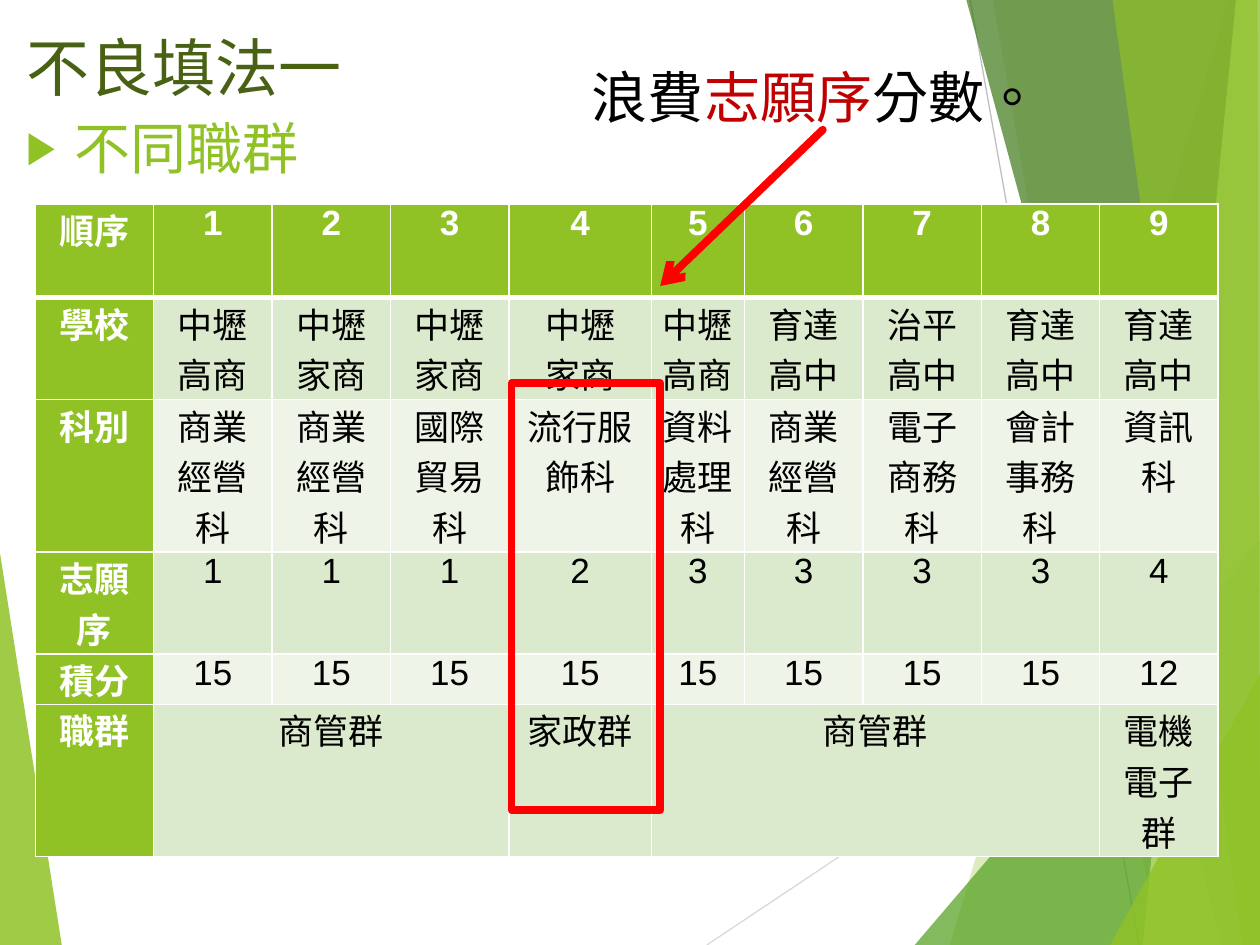
from lxml.etree import SubElement
from pptx import Presentation
from pptx.dml.color import RGBColor
from pptx.enum.shapes import MSO_CONNECTOR as Connector, MSO_SHAPE as Shape
from pptx.enum.text import MSO_ANCHOR as Anchor, PP_ALIGN as Align
from pptx.oxml import parse_xml
from pptx.oxml.ns import nsdecls, qn
from pptx.util import Inches, Pt

COLORS = {
    "lime": "90C226", "green": "54A021", "forest": "3F7819", "pale": "C0E474",
    "title": "486113", "band": "DBE9CD", "light": "EEF4E8", "white": "FFFFFF",
    "black": "000000", "red": "FF0000", "crimson": "C00000",
    "silver": "D9D9D9", "gray": "BFBFBF",
}

LEFT_FACET = ([(0, 4.39), (0.49, 7.5), (0, 7.5)], "lime", 85)
RIGHT_FACETS = [
    ([(9.75, 0), (7.54, 7.5), (10, 7.5), (10, 0)], "lime", 30),
    ([(7.88, 0), (9.19, 7.5), (10, 7.5), (10, 0)], "lime", 20),
    ([(7.26, 7.5), (10, 4.29), (10, 7.5)], "green", 72),
    ([(7.67, 0), (9.7, 7.5), (10, 7.5), (10, 0)], "forest", 70),
    ([(9.81, 0), (9.07, 7.5), (10, 7.5), (10, 0)], "pale", 70),
    ([(8.83, 0), (9.86, 7.5), (10, 7.5), (9.98, 0)], "lime", 65),
    ([(8.81, 7.5), (10, 5.35), (10, 7.5)], "lime", 80),
]
BACK_LINES = [((5.61, 7.5), (10, 4.57), "silver"), ((7.7, 0), (9.04, 7.5), "gray")]

ROWS = [
    ["順序", "1", "2", "3", "4", "5", "6", "7", "8", "9"],
    ["學校", "中壢高商", "中壢家商", "中壢家商", "中壢\n家商", "中壢高商",
     "育達高中", "治平高中", "育達高中", "育達高中"],
    ["科別", "商業經營科", "商業經營科", "國際貿易科", "流行服飾科", "資料處理科",
     "商業經營科", "電子商務科", "會計事務科", "資訊科"],
    ["志願序", "1", "1", "1", "2", "3", "3", "3", "3", "4"],
    ["積分", "15", "15", "15", "15", "15", "15", "15", "15", "12"],
    ["職群", "商管群", "", "", "家政群", "商管群", "", "", "", "電機電子群"],
]
MERGES = [(5, 1, 3), (5, 5, 8)]
COLUMN_WIDTHS = [0.94] * 4 + [1.13, 0.74] + [0.94] * 4
ROW_HEIGHTS = [0.74, 0.81, 1.21, 0.81, 0.4, 1.21]


def color(name):
    return RGBColor.from_string(COLORS[name])


def add_facet(slide, points, fill, opacity):
    corners = [(Inches(x), Inches(y)) for x, y in points]
    builder = slide.shapes.build_freeform(*corners[0])
    builder.add_line_segments(corners[1:], close=True)
    facet = builder.convert_to_shape()
    facet.shadow.inherit = False
    facet.line.fill.background()
    facet.fill.solid()
    facet.fill.fore_color.rgb = color(fill)
    tint = facet.fill._xPr.find(".//" + qn("a:srgbClr"))
    SubElement(tint, qn("a:alpha"), val=str(opacity * 1000))


def add_line(slide, start, end, stroke, width):
    line = slide.shapes.add_connector(
        Connector.STRAIGHT, *(Inches(value) for value in start + end))
    line.line.color.rgb = color(stroke)
    line.line.width = Pt(width)
    SubElement(line._element.spPr, qn("a:effectLst"))
    return line


def add_text(slide, place, spans, size, anchor):
    box = slide.shapes.add_textbox(*(Inches(value) for value in place))
    frame = box.text_frame
    frame.word_wrap = True
    frame.vertical_anchor = anchor
    para = frame.paragraphs[0]
    for text, font, fill in spans:
        span = para.add_run()
        span.text = text
        span.font.size = Pt(size)
        span.font.name = font
        span.font.color.rgb = color(fill)
        span._r.get_or_add_rPr().set("lang", "zh-TW")
    return box


def add_bullet(para):
    props = para._p.get_or_add_pPr()
    props.set("marL", str(Inches(0.38)))
    props.set("indent", str(-Inches(0.38)))
    tint = SubElement(props, qn("a:buClr"))
    SubElement(tint, qn("a:srgbClr"), val=COLORS["lime"])
    SubElement(props, qn("a:buSzPct"), val="80000")
    SubElement(props, qn("a:buFont"), typeface="Arial")
    SubElement(props, qn("a:buChar"), char="▶")


def set_borders(cell, row):
    widths = {"L": 1, "R": 1, "T": 3 if row == 1 else 1, "B": 3 if row == 0 else 1}
    props = cell._tc.get_or_add_tcPr()
    for index, (side, width) in enumerate(widths.items()):
        props.insert(index, parse_xml(
            f'<a:ln{side} {nsdecls("a")} w="{Pt(width)}"><a:solidFill>'
            f'<a:srgbClr val="{COLORS["white"]}"/></a:solidFill></a:ln{side}>'))


def style_cell(cell, text, row, column):
    heading = row == 0 or column == 0
    cell.text = text
    cell.margin_left = cell.margin_right = Inches(0.07)
    cell.margin_top = cell.margin_bottom = 0
    cell.fill.solid()
    cell.fill.fore_color.rgb = color(
        "lime" if heading else "band" if row % 2 else "light")
    set_borders(cell, row)
    for para in cell.text_frame.paragraphs:
        para.alignment = Align.CENTER
        para.font.size = Pt(20)
        for span in para.runs:
            span.font.size = Pt(20)
            span.font.name = "Arial"
            span.font.bold = heading
            span.font.color.rgb = color("white" if heading else "black")


def add_choices(slide):
    table = slide.shapes.add_table(
        len(ROWS), len(COLUMN_WIDTHS), Inches(0.28), Inches(1.62),
        Inches(sum(COLUMN_WIDTHS)), Inches(sum(ROW_HEIGHTS))).table
    for column, width in zip(table.columns, COLUMN_WIDTHS):
        column.width = Inches(width)
    for row, height in zip(table.rows, ROW_HEIGHTS):
        row.height = Inches(height)
    for r, texts in enumerate(ROWS):
        for c, text in enumerate(texts):
            style_cell(table.cell(r, c), text, r, c)
    for row, first, last in MERGES:
        table.cell(row, first).merge(table.cell(row, last))


def main():
    deck = Presentation()
    deck.slide_width, deck.slide_height = Inches(10), Inches(7.5)
    slide = deck.slides.add_slide(deck.slide_layouts[6])

    add_facet(slide, *LEFT_FACET)
    for start, end, stroke in BACK_LINES:
        add_line(slide, start, end, stroke, 0.75)
    for facet in RIGHT_FACETS:
        add_facet(slide, *facet)

    add_text(slide, (0.11, 0.18, 6.94, 1.44),
             [("不良填法一", "Cabin", "title")], 36, Anchor.TOP)
    add_choices(slide)
    subtitle = add_text(slide, (0.11, 0.85, 9.45, 0.64),
                        [("不同職群", "Cabin", "lime")], 32, Anchor.MIDDLE)
    add_bullet(subtitle.text_frame.paragraphs[0])

    highlight = slide.shapes.add_shape(
        Shape.RECTANGLE, Inches(4.06), Inches(3.04), Inches(1.18), Inches(3.39))
    highlight.shadow.inherit = False
    highlight.fill.background()
    highlight.line.color.rgb = color("red")
    highlight.line.width = Pt(4.5)
    SubElement(highlight.line._get_or_add_ln(), qn("a:round"))

    remark = add_text(slide, (4.6, 0.44, 3.86, 0.94),
                      [("浪費", "Cabin", "black"),
                       ("志願序", "Noto Sans CJK SC", "crimson"),
                       ("分數。", "Cabin", "black")], 32, Anchor.TOP)
    remark.text_frame.margin_top = Inches(0.06)

    arrow = add_line(slide, (6.53, 1.03), (5.24, 2.27), "red", 4.5)
    stroke = arrow.line._get_or_add_ln()
    stroke.set("cap", "rnd")
    SubElement(stroke, qn("a:round"))
    SubElement(stroke, qn("a:tailEnd"), type="arrow")

    deck.save("out.pptx")


if __name__ == "__main__":
    main()
